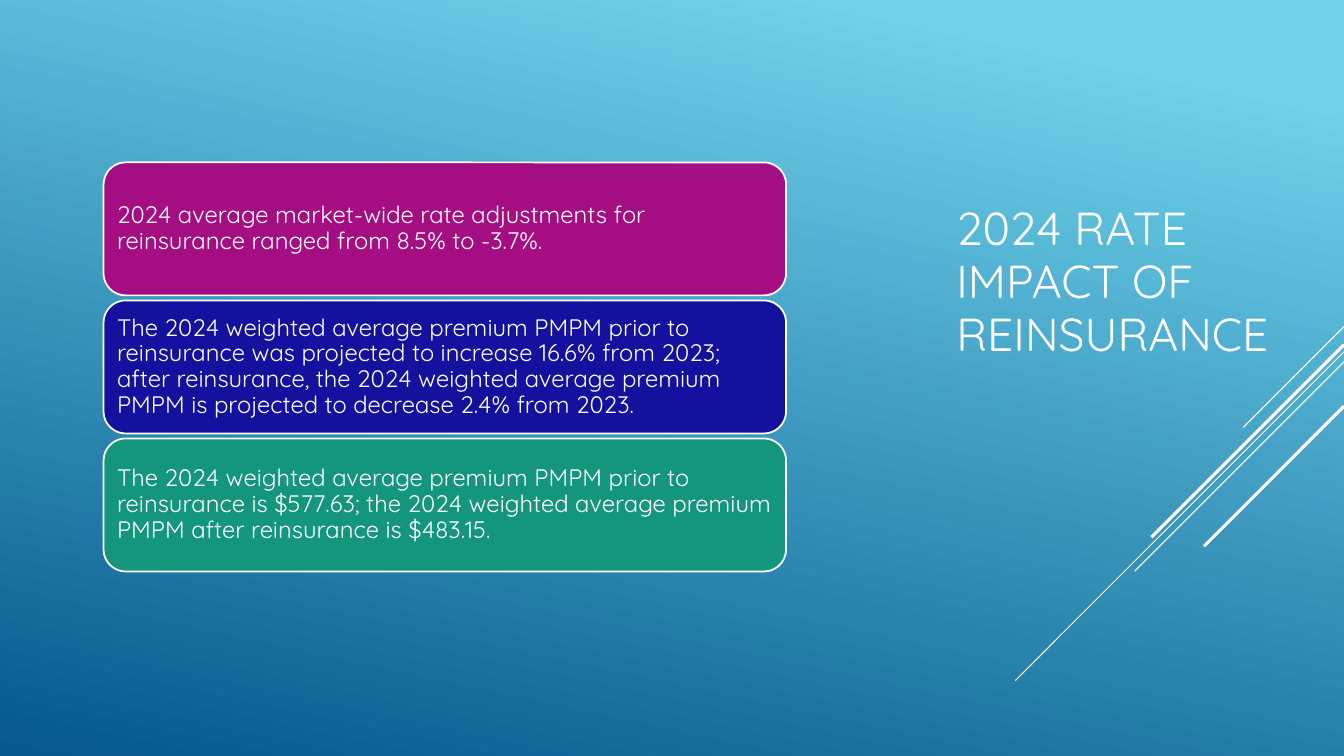
"""Build the slide on the 2024 rate impact of reinsurance."""
from typing import NamedTuple

from pptx import Presentation
from pptx.dml.color import RGBColor
from pptx.enum import shapes, text
from pptx.oxml.ns import qn
from pptx.util import Pt

WIDTH, HEIGHT = 960, 540
WHITE = "FFFFFF"
FONT = "Quicksand"


class Card(NamedTuple):
    color: str
    text: str


class Streak(NamedTuple):
    top: float
    length: float
    weight: float


CARDS = [
    Card("A50E82", "2024 average market-wide rate adjustments for reinsurance "
         "ranged from 8.5% to -3.7%."),
    Card("13119D", "The 2024 weighted average premium PMPM prior to reinsurance was "
         "projected to increase 16.6% from 2023; after reinsurance, the 2024 weighted "
         "average premium PMPM is projected to decrease 2.4% from 2023."),
    Card("14967C", "The 2024 weighted average premium PMPM prior to reinsurance is "
         "$577.63; the 2024 weighted average premium PMPM after reinsurance is $483.15."),
]
CARD_LEFT, CARD_TOP, CARD_WIDTH, CARD_HEIGHT, CARD_PITCH = 74, 116, 487.5, 95, 98.6

STREAKS = [
    Streak(233.3, 72, 0.75),
    Streak(251.3, 234.7, 0.75),
    Streak(258.5, 149.5, 0.75),
    Streak(246.2, 137.5, 2.25),
    Streak(290.2, 100, 2.25),
]


def rgb(value: str) -> RGBColor:
    return RGBColor.from_string(value)


def write(s, content: str, *, size: float, spacing: float, inset_x: float,
          inset_y: float, color: str = WHITE) -> None:
    tf = s.text_frame
    tf.word_wrap = True
    tf.vertical_anchor = text.MSO_ANCHOR.MIDDLE
    tf.margin_left = tf.margin_right = Pt(inset_x)
    tf.margin_top = tf.margin_bottom = Pt(inset_y)
    p = tf.paragraphs[0]
    p.alignment = text.PP_ALIGN.LEFT
    p.line_spacing = spacing
    r = p.add_run()
    r.text = content
    r.font.name = FONT
    r.font.size = Pt(size)
    r.font.color.rgb = rgb(color)


def draw_backdrop(sp) -> None:
    s = sp.add_shape(shapes.MSO_SHAPE.RECTANGLE, 0, 0, Pt(WIDTH), Pt(HEIGHT))
    s.shadow.inherit = False
    s.line.fill.background()
    s.fill.gradient()
    s.fill.gradient_angle = 360 - 102
    stops = [(0.1, "6ED2EB"), (1, "06588E")]
    for stop, (position, color) in zip(s.fill.gradient_stops, stops):
        stop.position = position
        stop.color.rgb = rgb(color)


def draw_streak(sp, streak: Streak) -> None:
    s = sp.add_connector(shapes.MSO_CONNECTOR.STRAIGHT, Pt(WIDTH), Pt(streak.top),
                         Pt(WIDTH - streak.length), Pt(streak.top + streak.length))
    s.line.color.rgb = rgb(WHITE)
    s.line.width = Pt(streak.weight)
    sp_pr = s._element.spPr
    sp_pr.append(sp_pr.makeelement(qn("a:effectLst"), {}))


def draw_card(sp, card: Card, top: float) -> None:
    s = sp.add_shape(shapes.MSO_SHAPE.ROUNDED_RECTANGLE, Pt(CARD_LEFT), Pt(top),
                     Pt(CARD_WIDTH), Pt(CARD_HEIGHT))
    s.shadow.inherit = False
    s.fill.solid()
    s.fill.fore_color.rgb = rgb(card.color)
    s.line.color.rgb = rgb(WHITE)
    s.line.width = Pt(1.25)
    write(s, card.text, size=17, spacing=0.9, inset_x=5, inset_y=5)


def main() -> None:
    prs = Presentation()
    prs.slide_width, prs.slide_height = Pt(WIDTH), Pt(HEIGHT)
    sp = prs.slides.add_slide(prs.slide_layouts[6]).shapes
    draw_backdrop(sp)
    for streak in STREAKS:
        draw_streak(sp, streak)
    title = sp.add_textbox(Pt(676), Pt(74), Pt(240), Pt(255.6))
    write(title, "2024 RATE IMPACT OF REINSURANCE", size=33, spacing=0.96,
          inset_x=7.2, inset_y=3.6)
    for i, card in enumerate(CARDS):
        draw_card(sp, card, CARD_TOP + i * CARD_PITCH)
    prs.save("out.pptx")


if __name__ == "__main__":
    main()
